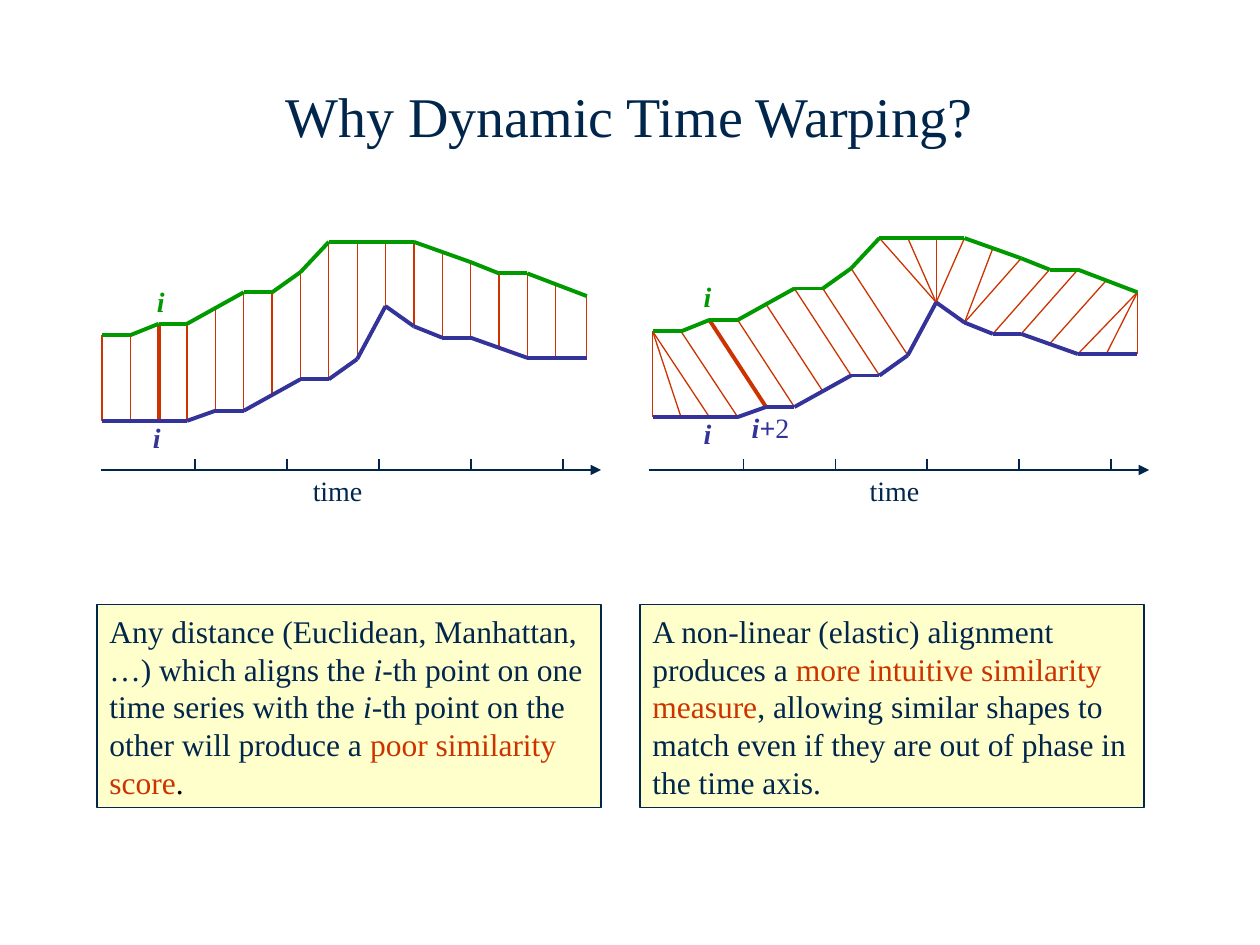
from dataclasses import dataclass
from itertools import pairwise
from typing import NamedTuple

from lxml import etree
from pptx import Presentation
from pptx.dml.color import RGBColor
from pptx.enum.shapes import MSO_CONNECTOR, MSO_SHAPE
from pptx.enum.text import MSO_ANCHOR, MSO_AUTO_SIZE, PP_ALIGN
from pptx.oxml.ns import qn
from pptx.util import Inches, Pt

STRAIGHT, RECT = MSO_CONNECTOR.STRAIGHT, MSO_SHAPE.RECTANGLE
MIDDLE, CENTER, LEFT = MSO_ANCHOR.MIDDLE, PP_ALIGN.CENTER, PP_ALIGN.LEFT
GROW = MSO_AUTO_SIZE.SHAPE_TO_FIT_TEXT

NAVY = RGBColor(0x00, 0x26, 0x4C)
GREEN = RGBColor(0x00, 0x99, 0x00)
BLUE = RGBColor(0x33, 0x33, 0x99)
RED = RGBColor(0xCC, 0x33, 0x00)
CREAM = RGBColor(0xFF, 0xFF, 0xCC)
WHITE = RGBColor(0xFF, 0xFF, 0xFF)
BLACK = RGBColor(0x00, 0x00, 0x00)
FONT = "Times New Roman"

# Inches: one column is one sample of the time series
SERIES_LEFT, COLUMN = 0.81, 0.225
AXIS_Y, AXIS_WIDTH = 3.73, 3.97
TICK_TOP, TICK_BOTTOM, TICK_START, TICK_STEP, TICKS = 3.64, 3.72, 0.75, 0.73, 5
LABEL_HEIGHT = 0.5
NOTE_TOP, NOTE_WIDTH, NOTE_HEIGHT = 4.8, 4.0, 1.61

# Height at each column where a series changes slope
LAST = 17.1
UPPER = {0: 2.66, 1: 2.66, 2: 2.57, 3: 2.57, 5: 2.32, 6: 2.32, 7: 2.16,
         8: 1.92, 11: 1.92, 13: 2.08, 14: 2.17, 15: 2.17, LAST: 2.35}
LOWER = {0: 3.34, 3: 3.34, 4: 3.26, 5: 3.26, 7: 3.01, 8: 3.01, 9: 2.85,
         10: 2.43, 11: 2.59, 12: 2.68, 13: 2.68, 15: 2.84, LAST: 2.84}

ONE_TO_ONE = [(i, i) for i in range(17)] + [(LAST, LAST)]
WARPED = ([(0, 0), (0, 1), (0, 2)]
          + [(i, i + 2) for i in range(1, 9)]
          + [(9, 10), (10, 10), (11, 10), (12, 11)]
          + [(i, i - 2) for i in range(13, 17)]
          + [(LAST, 15), (LAST, 16), (LAST, LAST)])


class Run(NamedTuple):
    text: str
    color: RGBColor = NAVY
    italic: bool = False
    bold: bool = False


class Label(NamedTuple):
    left: float
    top: float
    width: float
    runs: list[Run]


@dataclass
class Panel:
    dx: float
    dy: float
    axis_left: float
    note_left: float
    links: list[tuple[float, float]]
    labels: list[Label]
    note: list[Run]


def index_run(color: RGBColor, text: str = "i") -> Run:
    return Run(text, color, italic=True, bold=True)


PANELS = [
    Panel(0, 0, 0.8, 0.77, ONE_TO_ONE,
          [Label(1.2, 2.14, 0.15, [index_run(GREEN)]),
           Label(1.17, 3.22, 0.15, [index_run(BLUE)]),
           Label(2.53, 3.64, 0.3, [Run("time")])],
          [Run("Any distance (Euclidean, Manhattan, …) which aligns the "),
           Run("i", italic=True),
           Run("-th point on one time series with the "),
           Run("i", italic=True),
           Run("-th point on the other will produce a "),
           Run("poor similarity score", RED),
           Run(".", BLACK)]),
    Panel(4.37, -0.03, 5.15, 5.08, WARPED,
          [Label(5.54, 2.1, 0.15, [index_run(GREEN)]),
           Label(5.54, 3.19, 0.15, [index_run(BLUE)]),
           Label(5.97, 3.14, 0.29, [index_run(BLUE, "i+"), Run("2", BLUE)]),
           Label(6.95, 3.64, 0.3, [Run("time")])],
          [Run("A non-linear (elastic) alignment produces a "),
           Run("more intuitive similarity measure", RED),
           Run(", allowing similar shapes to match even if they are out of "
               "phase in the time axis.")]),
]


def add_line(shapes, start, end, color: RGBColor, width: float, arrow: bool = False) -> None:
    line = shapes.add_connector(STRAIGHT, *map(Inches, (*start, *end)))
    line.line.color.rgb = color
    line.line.width = Pt(width)
    if arrow:
        etree.SubElement(line.line._get_or_add_ln(), qn("a:tailEnd"), type="triangle")
    etree.SubElement(line._element.spPr, qn("a:effectLst"))


def add_text_rect(shapes, box, runs: list[Run], size: int, fill: RGBColor, align):
    s = shapes.add_shape(RECT, *map(Inches, box))
    s.shadow.inherit = False
    s.fill.solid()
    s.fill.fore_color.rgb = fill
    s.line.fill.background()
    tf = s.text_frame
    tf.vertical_anchor = MIDDLE
    p = tf.paragraphs[0]
    p.alignment = align
    p.font.name, p.font.size = FONT, Pt(size)
    for run in runs:
        r = p.add_run()
        r.text = run.text
        r.font.color.rgb = run.color
        r.font.italic, r.font.bold = run.italic, run.bold
    return s


def add_label(shapes, label: Label) -> None:
    box = (label.left, label.top, label.width, LABEL_HEIGHT)
    s = add_text_rect(shapes, box, label.runs, 16, WHITE, CENTER)
    s.text_frame.word_wrap = False


def add_note(shapes, panel: Panel) -> None:
    box = (panel.note_left, NOTE_TOP, NOTE_WIDTH, NOTE_HEIGHT)
    s = add_text_rect(shapes, box, panel.note, 18, CREAM, LEFT)
    s.line.color.rgb = NAVY
    s.line.width = Pt(0.75)
    s.text_frame.word_wrap = True
    s.text_frame.auto_size = GROW


def add_axis(shapes, left: float) -> None:
    group = shapes.add_group_shape().shapes
    add_line(group, (left, AXIS_Y), (left + AXIS_WIDTH, AXIS_Y), NAVY, 1.5, arrow=True)
    for i in range(TICKS):
        x = left + TICK_START + i * TICK_STEP
        add_line(group, (x, TICK_TOP), (x, TICK_BOTTOM), NAVY, 1)


def series_point(panel: Panel, series: dict[float, float], column: float) -> tuple[float, float]:
    """Slide position of a column, interpolated between the knots of the series."""
    for (c0, y0), (c1, y1) in pairwise(series.items()):
        if c0 <= column <= c1:
            y = y0 + (y1 - y0) * (column - c0) / (c1 - c0)
            return SERIES_LEFT + panel.dx + column * COLUMN, y + panel.dy
    raise ValueError(column)


def add_alignment(shapes, panel: Panel) -> None:
    for upper, lower in panel.links:
        width = 2.25 if upper == 2 else 0.75
        add_line(shapes, series_point(panel, UPPER, upper),
                 series_point(panel, LOWER, lower), RED, width)
    for series, color in ((UPPER, GREEN), (LOWER, BLUE)):
        group = shapes.add_group_shape().shapes
        for start, end in pairwise(series_point(panel, series, c) for c in series):
            add_line(group, start, end, color, 2.25)


def add_title(slide, text: str) -> None:
    title = slide.shapes.title
    title.left, title.top, title.width, title.height = map(Inches, (0.58, 0.5, 8.83, 0.83))
    tf = title.text_frame
    tf.text = text
    tf.vertical_anchor = MIDDLE
    p = tf.paragraphs[0]
    p.alignment = CENTER
    p.font.name, p.font.size = FONT, Pt(32)
    p.font.color.rgb = NAVY


def main() -> None:
    prs = Presentation()
    prs.slide_width, prs.slide_height = Inches(10), Inches(7.5)
    slide = prs.slides.add_slide(prs.slide_layouts[5])
    add_title(slide, "Why Dynamic Time Warping?")
    for panel in PANELS:
        for label in panel.labels:
            add_label(slide.shapes, label)
        add_note(slide.shapes, panel)
        add_axis(slide.shapes, panel.axis_left)
        add_alignment(slide.shapes, panel)
    prs.save("out.pptx")


if __name__ == "__main__":
    main()
